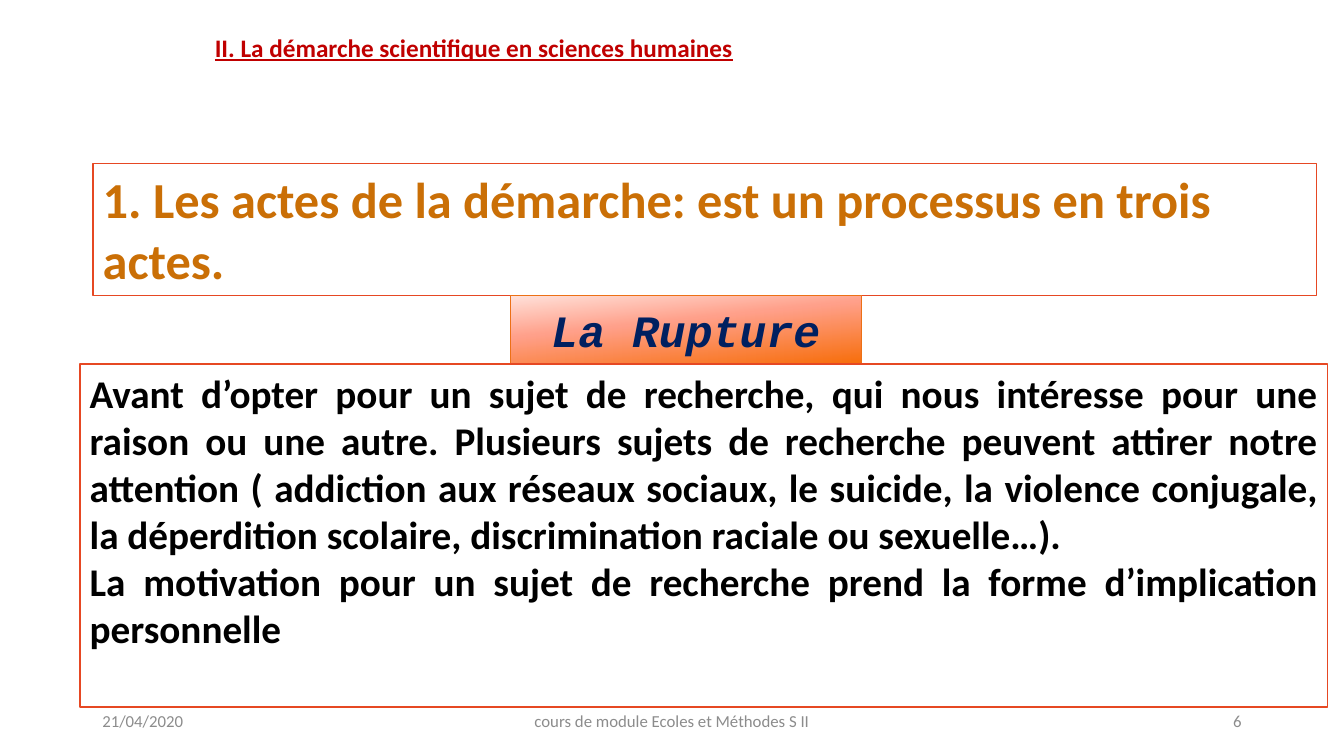
from copy import deepcopy
from pptx import Presentation
from pptx.dml.color import RGBColor
from pptx.enum.shapes import MSO_SHAPE as Geo
from pptx.enum.text import MSO_ANCHOR as Anchor, MSO_AUTO_SIZE as Fit, PP_ALIGN as Align
from pptx.util import Pt

RED = RGBColor(0xC0, 0x00, 0x00)
GREY = RGBColor(0x8C, 0x8C, 0x8C)
WHITE = RGBColor(0xFF, 0xFF, 0xFF)
BLACK = RGBColor(0x00, 0x00, 0x00)
NAVY = RGBColor(0x00, 0x20, 0x60)
OCHRE = RGBColor(0xCA, 0x6F, 0x06)
BRICK = RGBColor(0xE6, 0x48, 0x23)
AMBER = RGBColor(0xEC, 0x70, 0x16)
BLUSH = RGBColor(0xFF, 0xE1, 0xDA)
CORAL = RGBColor(0xFF, 0xA0, 0x8A)
FLAME = RGBColor(0xF7, 0x6E, 0x0B)

BODY = [
    "Avant d’opter pour un sujet de recherche, qui nous intéresse pour une raison ou une autre. "
    "Plusieurs sujets de recherche peuvent attirer notre attention ( addiction aux réseaux sociaux, "
    "le suicide, la violence conjugale, la déperdition scolaire, discrimination raciale ou sexuelle…). ",
    "La motivation pour un sujet de recherche prend la forme d’implication personnelle",
]


def write(shape, lines, size, color, align=Align.LEFT, anchor=Anchor.TOP, bold=True, face="Calibri"):
    frame = shape.text_frame
    frame.word_wrap = True
    frame.auto_size = Fit.NONE
    frame.vertical_anchor = anchor
    frame.text = "\n".join(lines)
    for para in frame.paragraphs:
        para.alignment = align
        font = para.font
        font.name, font.size, font.bold = face, Pt(size), bold
        font.color.rgb = color


def add_title(slide):
    title = slide.shapes.title
    title.left, title.top, title.width, title.height = Pt(146.2), Pt(19.4), Pt(387.4), Pt(28.8)
    write(title, ["II. La démarche scientifique en sciences humaines"], 18, RED)
    title.text_frame.word_wrap = False
    title.text_frame.paragraphs[0].font.underline = True


def add_foot(slide, left, width, text, align):
    box = slide.shapes.add_textbox(Pt(left), Pt(500.4), Pt(width), Pt(28.8))
    write(box, [text], 12, GREY, align, Anchor.MIDDLE, False)


def add_box(slide, left, top, width, height, edge, weight):
    box = slide.shapes.add_shape(Geo.RECTANGLE, Pt(left), Pt(top), Pt(width), Pt(height))
    box.shadow.inherit = False
    box.fill.solid()
    box.fill.fore_color.rgb = WHITE
    box.line.color.rgb = edge
    box.line.width = Pt(weight)
    return box


def shade(shape, stops, angle):
    shape.fill.gradient()
    shape.fill.gradient_angle = angle
    last = shape._element.spPr.xpath(".//a:gs")[-1]
    last.addnext(deepcopy(last))
    for stop, (place, color) in zip(shape.fill.gradient_stops, stops):
        stop.position = place
        stop.color.rgb = color


def main():
    deck = Presentation()
    deck.slide_width, deck.slide_height = Pt(960), Pt(540)
    slide = deck.slides.add_slide(deck.slide_layouts[5])

    add_title(slide)
    add_foot(slide, 66, 216, "21/04/2020", Align.LEFT)
    add_foot(slide, 318, 324, "cours de module Ecoles et Méthodes S II", Align.CENTER)
    add_foot(slide, 678, 216, "6", Align.RIGHT)

    acts = add_box(slide, 66.3, 116.8, 874, 94.4, BRICK, 1.25)
    write(acts, ["1. Les actes de la démarche: est un processus en trois actes."], 36, OCHRE)

    label = add_box(slide, 364.4, 211.2, 251.3, 48.8, AMBER, 0.75)
    shade(label, [(0, BLUSH), (0.4, CORAL), (1, FLAME)], 276)
    write(label, ["La Rupture"], 32, NAVY, Align.CENTER, Anchor.MIDDLE, face="Courier New")
    label.text_frame.paragraphs[0].font.italic = True

    body = add_box(slide, 57, 260, 891.2, 244.8, BRICK, 1.25)
    write(body, BODY, 28, BLACK, Align.JUSTIFY)

    deck.save("out.pptx")


if __name__ == "__main__":
    main()
